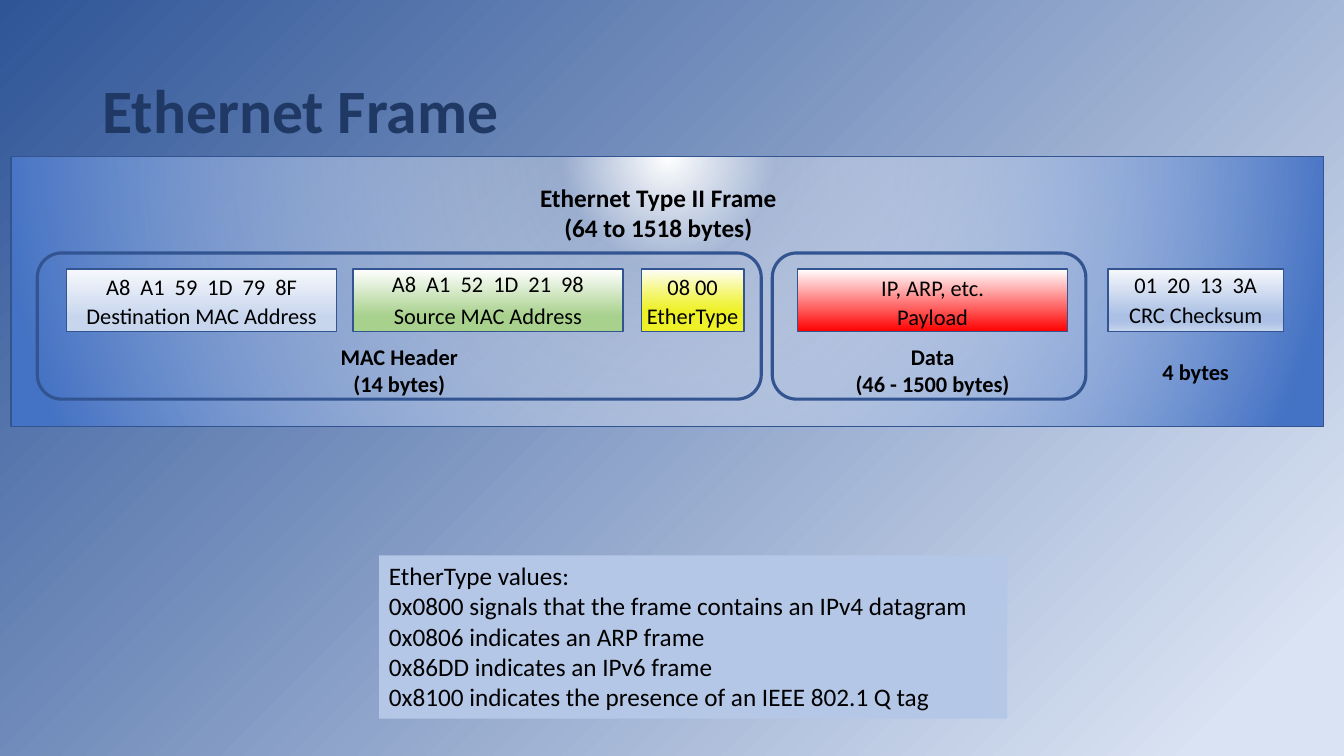
"""Build a slide that explains the layout of an Ethernet frame."""
from dataclasses import dataclass

from lxml import etree
from pptx import Presentation
from pptx import util as u
from pptx.dml.color import RGBColor
from pptx.enum import shapes, text
from pptx.oxml.ns import qn

COLORS = {
    "navy": "203864", "line": "325491", "blue": "4472C4", "note": "B4C7E7",
    "bg_dark": "2F5597", "bg_light": "DAE3F3", "white": "FFFFFF", "black": "000000",
    "pale": "F6F8FC", "sky": "C7D5ED", "steel": "ABC0E4",
    "red": "FF0000", "green": "A9D18E", "yellow": "FFFF00",
}
DOWN, UP, DIAGONAL = 90, 270, 45
CENTER, LEFT = text.PP_ALIGN.CENTER, text.PP_ALIGN.LEFT
RECT, ROUNDED = shapes.MSO_SHAPE.RECTANGLE, shapes.MSO_SHAPE.ROUNDED_RECTANGLE


@dataclass
class Stop:
    pos: int
    color: str
    alpha: int = 100


@dataclass
class Label:
    lines: list[str]
    center: float
    top: float
    width: float
    height: float = 0.37
    size: int = 16
    bold: bool = False


@dataclass
class Field:
    left: float
    width: float
    value: str
    value_top: float
    value_width: float
    name: str
    name_top: float
    name_width: float
    stops: list[Stop]
    angle: int


@dataclass
class Group:
    left: float
    width: float


FIELDS = [
    Field(0.66, 2.68, "A8  A1  59  1D  79  8F", 2.66, 2.17, "Destination MAC Address", 2.95, 2.52,
          [Stop(0, "pale"), Stop(79, "sky")], DOWN),
    Field(3.5, 2.68, "A8  A1  52  1D  21  98", 2.63, 2.13, "Source MAC Address", 2.95, 2.09,
          [Stop(26, "green"), Stop(100, "white")], UP),
    Field(6.36, 1.02, "08 00", 2.66, 0.71, "EtherType", 2.95, 1.12,
          [Stop(34, "yellow", 81), Stop(100, "white")], UP),
    Field(7.91, 2.68, "IP, ARP, etc.", 2.67, 1.23, "Payload", 2.96, 0.91,
          [Stop(0, "red"), Stop(100, "white")], UP),
    Field(10.99, 1.74, "01  20  13  3A", 2.64, 1.43, "CRC Checksum", 2.94, 1.54,
          [Stop(0, "pale"), Stop(74, "steel"), Stop(83, "steel"), Stop(100, "sky")], DOWN),
]
GROUPS = [Group(0.37, 7.18), Group(7.66, 3.11)]
CAPTIONS = [
    Label(["MAC Header", "(14 bytes)"], 3.96, 3.36, 1.38, 0.64, bold=True),
    Label(["Data", "(46 - 1500 bytes)"], 9.25, 3.36, 1.74, 0.64, bold=True),
    Label(["4 bytes"], 11.86, 3.5, 0.87, bold=True),
    Label(["Ethernet Type II Frame", "(64 to 1518 bytes)"], 6.53, 1.76, 2.57, 0.71, 18, True),
]
NOTE = [
    "EtherType values:",
    "0x0800 signals that the frame contains an IPv4 datagram",
    "0x0806 indicates an ARP frame",
    "0x86DD indicates an IPv6 frame",
    "0x8100 indicates the presence of an IEEE 802.1 Q tag",
]


def rgb(name: str) -> RGBColor:
    return RGBColor.from_string(COLORS[name])


def set_gradient(owner, fill, stops: list[Stop], angle: int | None = None) -> None:
    fill.gradient()
    grad = owner._element.find(".//" + qn("a:gradFill"))
    for child in list(grad):
        grad.remove(child)
    stop_list = etree.SubElement(grad, qn("a:gsLst"))
    for stop in stops:
        gs = etree.SubElement(stop_list, qn("a:gs"), pos=str(stop.pos * 1000))
        clr = etree.SubElement(gs, qn("a:srgbClr"), val=COLORS[stop.color])
        if stop.alpha < 100:
            etree.SubElement(clr, qn("a:alpha"), val=str(stop.alpha * 1000))
    if angle is None:
        circle = etree.SubElement(grad, qn("a:path"), {"path": "circle"})
        etree.SubElement(circle, qn("a:fillToRect"), l="50000", t="-80000", r="50000", b="180000")
    else:
        etree.SubElement(grad, qn("a:lin"), ang=str(angle * 60000), scaled="0")


def add_box(s, kind, left: float, top: float, width: float, height: float, line: float = 1):
    sp = s.shapes.add_shape(kind, *map(u.Inches, (left, top, width, height)))
    sp.shadow.inherit = False
    if line:
        sp.line.color.rgb = rgb("line")
        sp.line.width = u.Pt(line)
    else:
        sp.line.fill.background()
    return sp


def write(sp, lines: list[str], size: int, color: str = "black", bold: bool = False,
          align=LEFT, wrap: bool = True, anchor=text.MSO_ANCHOR.TOP) -> None:
    tf = sp.text_frame
    for key, value in {"word_wrap": wrap, "vertical_anchor": anchor}.items():
        setattr(tf, key, value)
    font = {"name": "Calibri", "size": u.Pt(size), "bold": bold}
    for i, line in enumerate(lines):
        p = tf.add_paragraph() if i else tf.paragraphs[0]
        p.alignment = align
        r = p.add_run()
        r.text = line
        for key, value in font.items():
            setattr(r.font, key, value)
        r.font.color.rgb = rgb(color)


def add_label(s, label: Label) -> None:
    left = label.center - label.width / 2
    sp = s.shapes.add_textbox(*map(u.Inches, (left, label.top, label.width, label.height)))
    write(sp, label.lines, label.size, bold=label.bold, align=CENTER, wrap=False)


def main() -> None:
    prs = Presentation()
    prs.slide_width, prs.slide_height = u.Inches(13.33), u.Inches(7.5)
    s = prs.slides.add_slide(prs.slide_layouts[6])
    set_gradient(s, s.background.fill, [Stop(0, "bg_dark"), Stop(93, "bg_light")], DIAGONAL)

    panel = add_box(s, RECT, 0.11, 1.55, 13.02, 2.68)
    set_gradient(panel, panel.fill, [Stop(0, "white"), Stop(16, "white", 28), Stop(100, "blue")])

    title = s.shapes.add_textbox(*map(u.Inches, (0.92, 0.4, 11.5, 1.45)))
    write(title, ["Ethernet Frame"], 44, "navy", True, anchor=text.MSO_ANCHOR.MIDDLE)
    title.text_frame.paragraphs[0].line_spacing = 0.9

    note = add_box(s, RECT, 3.76, 5.51, 6.23, 1.62, line=0)
    note.fill.solid()
    note.fill.fore_color.rgb = rgb("note")
    write(note, NOTE, 18)

    for field in FIELDS:
        sp = add_box(s, RECT, field.left, 2.67, field.width, 0.62)
        set_gradient(sp, sp.fill, field.stops, field.angle)
    for group in GROUPS:
        add_box(s, ROUNDED, group.left, 2.51, group.width, 1.45, 2.25).fill.background()
    for field in FIELDS:
        center = field.left + field.width / 2
        add_label(s, Label([field.name], center, field.name_top, field.name_width))
        add_label(s, Label([field.value], center, field.value_top, field.value_width))
    for caption in CAPTIONS:
        add_label(s, caption)

    prs.save("out.pptx")


if __name__ == "__main__":
    main()
